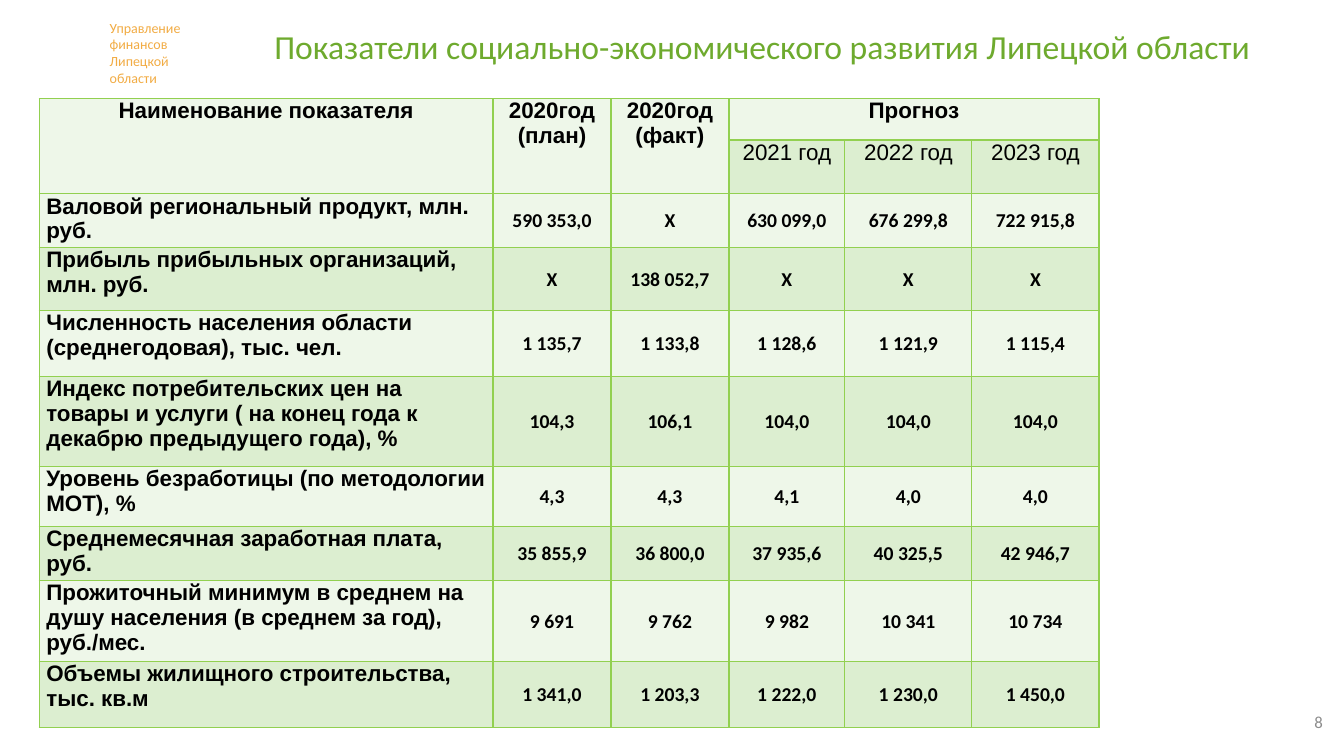
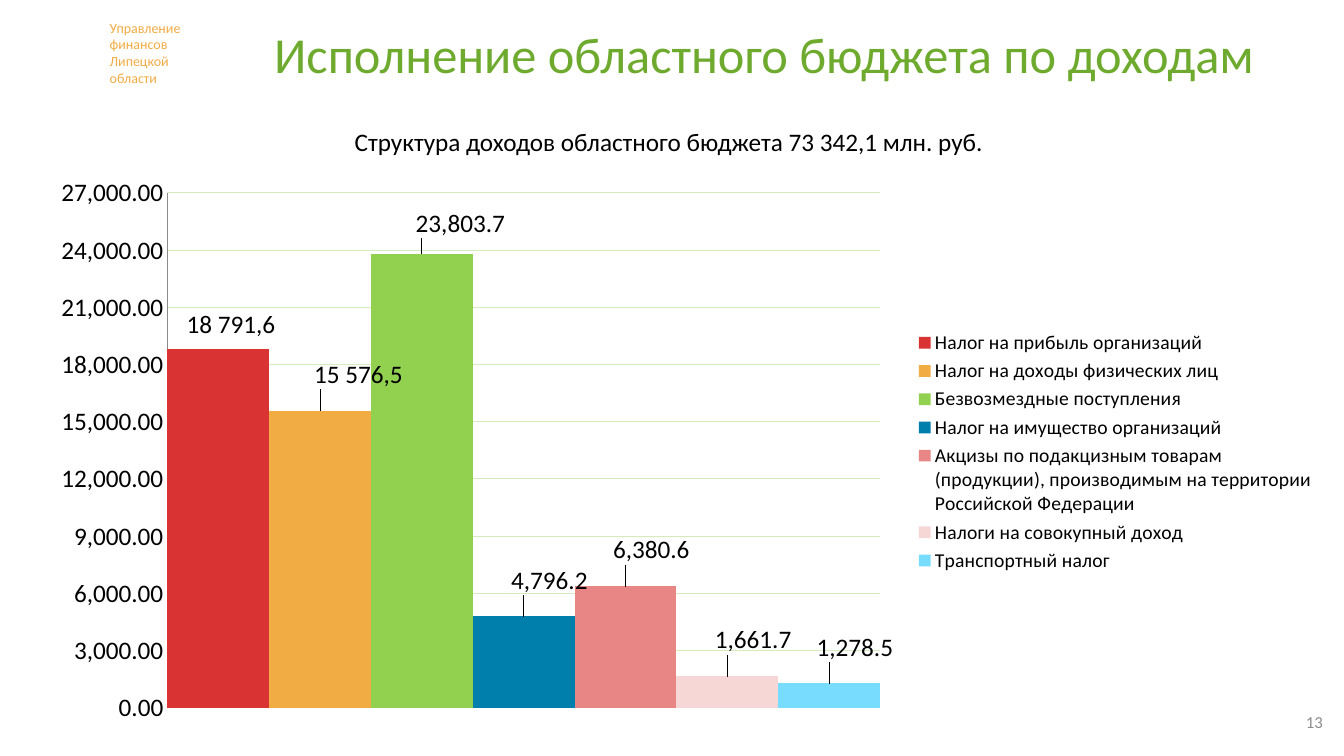
from dataclasses import dataclass

from lxml.etree import SubElement
from pptx import Presentation
from pptx.chart.data import CategoryChartData
from pptx.dml.color import RGBColor
from pptx.enum.chart import XL_CHART_TYPE, XL_LABEL_POSITION, XL_LEGEND_POSITION, XL_TICK_MARK
from pptx.enum.text import MSO_ANCHOR, PP_ALIGN
from pptx.oxml import parse_xml
from pptx.oxml.ns import nsdecls, qn
from pptx.util import Inches, Pt


@dataclass(frozen=True)
class Theme:
    body_font: str = "Calibri"
    table_font: str = "Arial"
    title: str = "6EAA2E"
    owner: str = "F2AC44"
    number: str = "8C8C8C"
    text: str = "000000"
    border: str = "92D050"
    grid: str = "D3ECB9"
    bands: tuple = ("EEF7E9", "DCEED0")
    bars: tuple = ("D93333", "F2AC44", "92D050", "007FAC", "E88585", "F7D6D6", "78DCFF")
    owner_size: int = 10
    number_size: int = 12
    small_size: int = 14
    label_size: int = 16
    chart_size: int = 18


THEME = Theme()

COLUMN_WIDTHS = [4.5, 1.17, 1.17, 1.15, 1.26, 1.26]
ROW_HEIGHTS = [0.41, 0.5, 0.45, 0.62, 0.66, 0.89, 0.6, 0.5, 0.67, 0.66]
HEADER_ROWS = [
    ["Наименование показателя", "2020год (план)", "2020год (факт)", "Прогноз", "", ""],
    ["", "", "", "2021 год", "2022 год", "2023 год"],
]
INDICATOR_ROWS = [
    ["Валовой региональный продукт, млн. руб.",
     "590 353,0", "Х", "630 099,0", "676 299,8", "722 915,8"],
    ["Прибыль прибыльных организаций, млн. руб.", "Х", "138 052,7", "Х", "Х", "Х"],
    ["Численность населения области (среднегодовая), тыс. чел.",
     "1 135,7", "1 133,8", "1 128,6", "1 121,9", "1 115,4"],
    ["Индекс потребительских цен на товары и услуги ( на конец года к декабрю предыдущего года), %",
     "104,3", "106,1", "104,0", "104,0", "104,0"],
    ["Уровень безработицы (по методологии МОТ), %", "4,3", "4,3", "4,1", "4,0", "4,0"],
    ["Среднемесячная заработная плата, руб.",
     "35 855,9", "36 800,0", "37 935,6", "40 325,5", "42 946,7"],
    ["Прожиточный минимум в среднем на душу населения (в среднем за год), руб./мес.",
     "9 691", "9 762", "9 982", "10 341", "10 734"],
    ["Объемы жилищного строительства, тыс. кв.м",
     "1 341,0", "1 203,3", "1 222,0", "1 230,0", "1 450,0"],
]
INCOME = {
    "Налог на прибыль организаций": 18791.6,
    "Налог на доходы физических лиц": 15576.5,
    "Безвозмездные поступления": 23803.7,
    "Налог на имущество организаций": 4796.2,
    "Акцизы по подакцизным товарам (продукции), производимым на территории Российской Федерации": 6380.6,
    "Налоги на совокупный доход": 1661.7,
    "Транспортный налог": 1278.5,
}
CUSTOM_LABELS = {0: "18 791,6", 1: "15 576,5"}
LABEL_SHIFTS = [(0.01, -0.01), (0.03, -0.03), (0.03, -0.02), (0.02, -0.03),
                (0.02, -0.03), (0.02, -0.03), (0.02, -0.03)]


def apply_format(target, values):
    for name, value in values.items():
        setattr(target, name, value)


def format_font(font, size, color=THEME.text, name=THEME.body_font, bold=False):
    apply_format(font, {"size": Pt(size), "name": name, "bold": bold})
    font.color.rgb = RGBColor.from_string(color)


def add_text(slide, text, box, size, color, align=PP_ALIGN.LEFT, anchor=MSO_ANCHOR.TOP, spacing=None):
    shape = slide.shapes.add_textbox(*map(Inches, box))
    apply_format(shape.text_frame, {"word_wrap": True, "vertical_anchor": anchor, "text": text})
    paragraph = shape.text_frame.paragraphs[0]
    apply_format(paragraph, {"alignment": align, "line_spacing": spacing})
    format_font(paragraph.runs[0].font, size, color)


def add_slide(presentation, title, title_box, title_size, number):
    slide = presentation.slides.add_slide(presentation.slide_layouts[6])
    add_text(slide, "Управление финансов Липецкой области", (0.99, 0.14, 0.97, 0.77),
             THEME.owner_size, THEME.owner)
    add_text(slide, title, title_box, title_size, THEME.title,
             PP_ALIGN.CENTER, MSO_ANCHOR.MIDDLE, 0.9)
    add_text(slide, str(number), (10.11, 6.96, 3.11, 0.4), THEME.number_size, THEME.number,
             PP_ALIGN.RIGHT, MSO_ANCHOR.MIDDLE)
    return slide


def add_borders(cell):
    properties = cell._tc.get_or_add_tcPr()
    for side in ("lnL", "lnR", "lnT", "lnB"):
        properties.append(parse_xml(
            f'<a:{side} {nsdecls("a")} w="{Pt(1)}"><a:solidFill>'
            f'<a:srgbClr val="{THEME.border}"/></a:solidFill></a:{side}>'))


def format_cell(cell, text, row, column):
    is_value = row >= len(HEADER_ROWS) and column > 0
    is_label = row >= len(HEADER_ROWS) and column == 0
    side = Inches(0.01 if is_value else 0.07)
    apply_format(cell, {
        "text": text,
        "margin_left": side,
        "margin_right": side,
        "margin_top": Inches(0.01 if is_value else 0),
        "margin_bottom": 0,
        "vertical_anchor": MSO_ANCHOR.MIDDLE if is_value else MSO_ANCHOR.TOP,
    })
    paragraph = cell.text_frame.paragraphs[0]
    paragraph.alignment = PP_ALIGN.LEFT if is_label else PP_ALIGN.CENTER
    size, name = (THEME.small_size, THEME.body_font) if is_value else (THEME.label_size, THEME.table_font)
    format_font(paragraph.font, size, name=name, bold=row != 1)
    for run in paragraph.runs:
        format_font(run.font, size, name=name, bold=row != 1)
    add_borders(cell)
    cell.fill.solid()
    cell.fill.fore_color.rgb = RGBColor.from_string(THEME.bands[row % 2])


def add_indicator_table(slide):
    rows = HEADER_ROWS + INDICATOR_ROWS
    box = (0.39, 0.98, sum(COLUMN_WIDTHS), sum(ROW_HEIGHTS))
    table = slide.shapes.add_table(len(rows), len(COLUMN_WIDTHS), *map(Inches, box)).table
    apply_format(table, {"first_row": False, "horz_banding": False})
    for column, width in zip(table.columns, COLUMN_WIDTHS):
        column.width = Inches(width)
    for row, height in zip(table.rows, ROW_HEIGHTS):
        row.height = Inches(height)
    for row, texts in enumerate(rows):
        for column, text in enumerate(texts):
            format_cell(table.cell(row, column), text, row, column)
    for column in range(3):
        table.cell(0, column).merge(table.cell(1, column))
    table.cell(0, 3).merge(table.cell(0, 5))


def make_layout(**values):
    layout = parse_xml(f'<c:layout {nsdecls("c")}><c:manualLayout/></c:layout>')
    for name, value in values.items():
        SubElement(layout[0], qn(f"c:{name}")).set("val", str(value))
    return layout


def set_layout(element, predecessor, **values):
    for existing in element.findall(qn("c:layout")):
        element.remove(existing)
    layout = make_layout(**values)
    if predecessor is None:
        element.insert(0, layout)
    else:
        element.find(qn(predecessor)).addnext(layout)


def format_point(series, index):
    point = series.points[index]
    point.format.fill.solid()
    point.format.fill.fore_color.rgb = RGBColor.from_string(THEME.bars[index])
    label = point.data_label
    if index in CUSTOM_LABELS:
        label.text_frame.text = CUSTOM_LABELS[index]
        format_font(label.text_frame.paragraphs[0].runs[0].font, THEME.chart_size)
    else:
        format_font(label.font, THEME.chart_size)
    label.position = XL_LABEL_POSITION.OUTSIDE_END
    horizontal, vertical = LABEL_SHIFTS[index]
    element = series._element.find(qn("c:dLbls")).findall(qn("c:dLbl"))[index]
    set_layout(element, "c:idx", x=horizontal, y=vertical)


def format_value_axis(axis):
    apply_format(axis, {
        "minimum_scale": 0,
        "maximum_scale": 27000,
        "major_unit": 3000,
        "major_tick_mark": XL_TICK_MARK.NONE,
        "minor_tick_mark": XL_TICK_MARK.NONE,
        "has_major_gridlines": True,
    })
    apply_format(axis.tick_labels, {"number_format": "#,##0.00", "number_format_is_linked": False})
    for line, color in ((axis.major_gridlines.format.line, THEME.grid), (axis.format.line, THEME.number)):
        line.width = Pt(0.75)
        line.color.rgb = RGBColor.from_string(color)


def add_income_chart(slide):
    data = CategoryChartData(number_format="#,##0.0")
    data.categories = list(INCOME)
    data.add_series("Series 1", list(INCOME.values()))
    box = map(Inches, (0.36, 1.66, 12.74, 5.64))
    chart = slide.shapes.add_chart(XL_CHART_TYPE.COLUMN_CLUSTERED, *box, data).chart
    apply_format(chart, {"has_title": False, "has_legend": True})
    format_font(chart.font, THEME.chart_size)
    apply_format(chart.legend, {"position": XL_LEGEND_POSITION.RIGHT, "include_in_layout": False})
    format_font(chart.legend.font, THEME.small_size)
    chart.category_axis.visible = False
    format_value_axis(chart.value_axis)

    plot = chart.plots[0]
    apply_format(plot, {"vary_by_categories": True, "gap_width": 0, "has_data_labels": False})
    series = plot.series[0]
    apply_format(series.data_labels, {
        "show_value": True,
        "number_format": "#,##0.0",
        "number_format_is_linked": False,
        "position": XL_LABEL_POSITION.OUTSIDE_END,
    })
    for index in range(len(INCOME)):
        format_point(series, index)

    plot_area = chart._chartSpace.chart.plotArea
    set_layout(plot_area, None, layoutTarget="inner", xMode="edge", yMode="edge",
               x=0.102, y=0.045, w=0.555, h=0.906)
    set_layout(chart.legend._element, "c:legendPos", xMode="edge", yMode="edge",
               x=0.68, y=0.28, w=0.32, h=0.44)


def main():
    presentation = Presentation()
    apply_format(presentation, {"slide_width": Inches(13.33), "slide_height": Inches(7.5)})

    slide = add_slide(presentation, "Показатели социально-экономического развития Липецкой области",
                      (1.94, 0.25, 11.24, 0.47), 24, 8)
    add_indicator_table(slide)

    slide = add_slide(presentation, "Исполнение областного бюджета по доходам",
                      (2.1, 0.25, 10.96, 0.64), 36, 13)
    add_income_chart(slide)
    add_text(slide, "Структура доходов областного бюджета 73 342,1 млн. руб.",
             (3.42, 1.2, 6.87, 0.4), THEME.chart_size, THEME.text)

    presentation.save("out.pptx")


if __name__ == "__main__":
    main()
